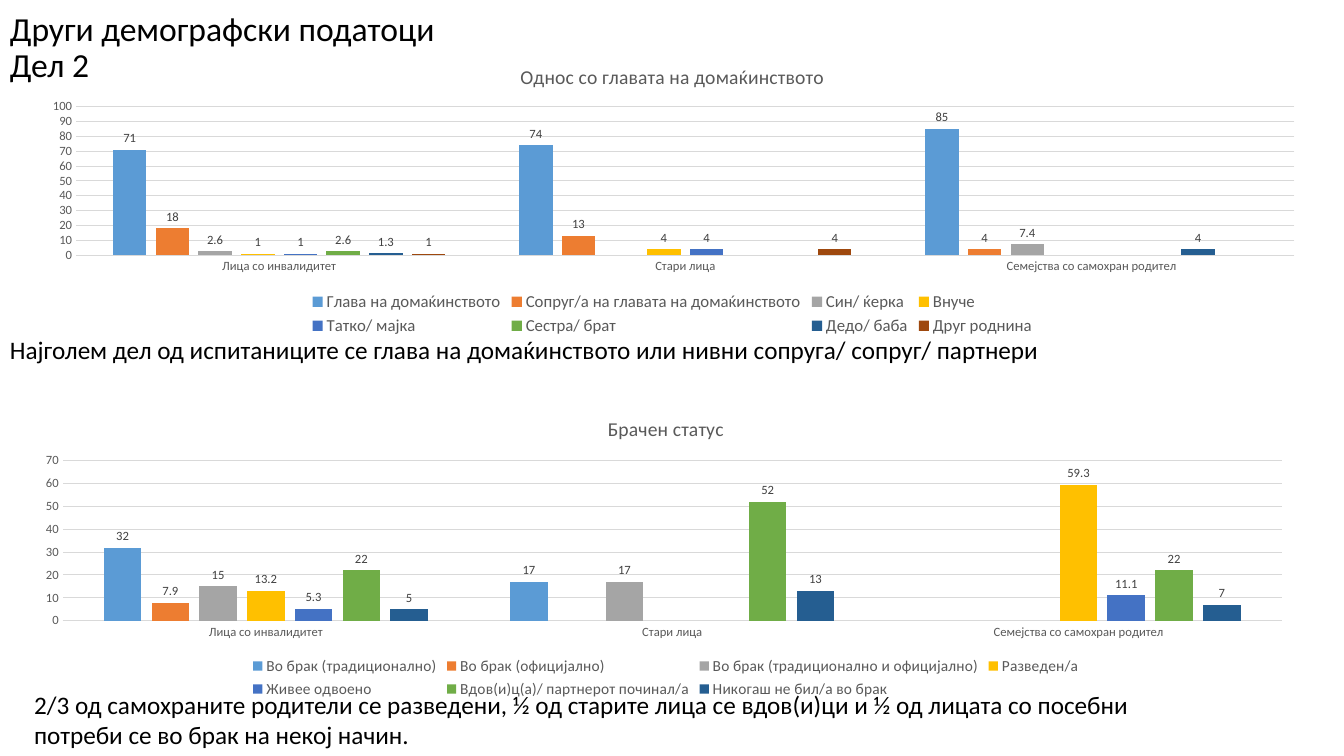
import pptx
import pptx.chart.data
import pptx.dml.color
import pptx.enum.chart
import pptx.enum.text
import pptx.oxml
import pptx.oxml.ns
import pptx.util

Pt = pptx.util.Pt
FONT = "Calibri"
COLORS = {"text": "000000", "muted": "595959", "label": "404040", "grid": "D9D9D9"}
SERIES_COLORS = {
    "blue": "5B9BD5", "orange": "ED7D31", "grey": "A5A5A5", "yellow": "FFC000",
    "indigo": "4472C4", "green": "70AD47", "navy": "255E91", "brown": "9E480E",
}
GROUPS = ["Лица со инвалидитет", "Стари лица", "Семејства со самохран родител"]

TEXTS = [
    {"lines": ["Други демографски податоци", "Дел 2"], "box": (0, -17.3, 828, 104.4),
     "size": 24, "spacing": 0.9, "anchor": "MIDDLE", "wrap": True},
    {"lines": ["Најголем дел од испитаниците се глава на домаќинството "
               "или нивни сопруга/ сопруг/ партнери"],
     "box": (0, 235.4, 758.2, 28.8), "size": 18, "spacing": 1, "anchor": "TOP", "wrap": False},
    {"lines": ["2/3 од самохраните родители се разведени, ½ од старите лица се вдов(и)ци "
               "и ½ од лицата со посебни потреби се во брак на некој начин."],
     "box": (17.3, 488.9, 825.1, 51.1), "size": 18, "spacing": 1, "anchor": "TOP", "wrap": True},
]

# plot: left, top, width and height as shares of the chart
CHARTS = [
    {"title": "Однос со главата на домаќинството", "box": (17.3, 34.6, 925.9, 208.1),
     "plot": (0.04, 0.2, 0.94, 0.51), "maximum": 100, "legend_size": 12,
     "series": [
         ("Глава на домаќинството", (71, 74, 85)),
         ("Сопруг/а на главата на домаќинството", (18, 13, 4)),
         ("Син/ ќерка", (2.6, None, 7.4)),
         ("Внуче", (1, 4, None)),
         ("Татко/ мајка", (1, 4, None)),
         ("Сестра/ брат", (2.6, None, None)),
         ("Дедо/ баба", (1.3, None, 4)),
         ("Друг роднина", (1, 4, None)),
     ]},
    {"title": "Брачен статус", "box": (17.3, 285.8, 916.6, 216),
     "plot": (0.03, 0.2, 0.95, 0.53), "maximum": 70, "legend_size": 11,
     "series": [
         ("Во брак (традиционално)", (32, 17, None)),
         ("Во брак (официјално)", (7.9, None, None)),
         ("Во брак (традиционално и официјално)", (15, 17, None)),
         ("Разведен/а", (13.2, None, 59.3)),
         ("Живее одвоено", (5.3, None, 11.1)),
         ("Вдов(и)ц(а)/ партнерот починал/а", (22, 52, 22)),
         ("Никогаш не бил/а во брак", (5, 13, 7)),
     ]},
]


def rgb(value):
    return pptx.dml.color.RGBColor.from_string(value)


def set_font(font, size, color):
    font.name = FONT
    font.size = Pt(size)
    font.bold = False
    font.color.rgb = rgb(COLORS[color])


def set_line(line):
    line.color.rgb = rgb(COLORS["grid"])
    line.width = Pt(0.75)


def add_text(slide, lines, box, size, spacing, anchor, wrap):
    frame = slide.shapes.add_textbox(*map(Pt, box)).text_frame
    frame.word_wrap = wrap
    frame.vertical_anchor = getattr(pptx.enum.text.MSO_ANCHOR, anchor)
    paragraph = frame.paragraphs[0]
    paragraph.line_spacing = spacing
    for number, line in enumerate(lines):
        if number:
            paragraph.add_line_break()
        run = paragraph.add_run()
        run.text = line
        set_font(run.font, size, "text")


def place_plot(chart, plot):
    """Fix the inner plot area, given as shares of the chart."""
    area = chart._chartSpace.chart.plotArea
    for old in area.findall(pptx.oxml.ns.qn("c:layout")):
        area.remove(old)
    shares = "".join(f'<c:{key} val="{share}"/>' for key, share in zip("xywh", plot))
    area.insert(0, pptx.oxml.parse_xml(
        f'<c:layout {pptx.oxml.ns.nsdecls("c")}><c:manualLayout><c:layoutTarget val="inner"/>'
        f'<c:xMode val="edge"/><c:yMode val="edge"/>{shares}</c:manualLayout></c:layout>'))


def style_axes(chart, maximum):
    for axis in (chart.category_axis, chart.value_axis):
        axis.major_tick_mark = pptx.enum.chart.XL_TICK_MARK.NONE
        axis.minor_tick_mark = pptx.enum.chart.XL_TICK_MARK.NONE
        set_font(axis.tick_labels.font, 9, "muted")
    set_line(chart.category_axis.format.line)
    values = chart.value_axis
    values.format.line.fill.background()
    values.minimum_scale, values.maximum_scale, values.major_unit = 0, maximum, 10
    values.tick_labels.number_format = "0"
    values.tick_labels.number_format_is_linked = False
    set_line(values.major_gridlines.format.line)


def style_columns(columns):
    columns.gap_width, columns.overlap = 219, -27
    columns.vary_by_categories = False
    for series, color in zip(columns.series, SERIES_COLORS.values()):
        series.format.fill.solid()
        series.format.fill.fore_color.rgb = rgb(color)
        labels = series.data_labels
        labels.show_value = True
        labels.position = pptx.enum.chart.XL_LABEL_POSITION.OUTSIDE_END
        labels.number_format = "General"
        labels.number_format_is_linked = False
        set_font(labels.font, 9, "label")


def add_column_chart(slide, title, box, plot, maximum, legend_size, series):
    data = pptx.chart.data.CategoryChartData()
    data.categories = GROUPS
    for name, values in series:
        data.add_series(name, values)
    chart = slide.shapes.add_chart(
        pptx.enum.chart.XL_CHART_TYPE.COLUMN_CLUSTERED, *map(Pt, box), data).chart
    set_font(chart.font, 10, "text")
    heading = chart.chart_title.text_frame.paragraphs[0].add_run()
    heading.text = title
    set_font(heading.font, 14, "muted")
    chart.chart_title.include_in_layout = False
    chart.has_legend = True
    chart.legend.position = pptx.enum.chart.XL_LEGEND_POSITION.BOTTOM
    chart.legend.include_in_layout = False
    set_font(chart.legend.font, legend_size, "muted")
    style_axes(chart, maximum)
    style_columns(chart.plots[0])
    place_plot(chart, plot)


def main():
    deck = pptx.Presentation()
    deck.slide_width, deck.slide_height = Pt(960), Pt(540)
    slide = deck.slides.add_slide(deck.slide_layouts[6])
    for chart in CHARTS:
        add_column_chart(slide, **chart)
    for text in TEXTS:
        add_text(slide, **text)
    deck.save("out.pptx")


if __name__ == "__main__":
    main()
